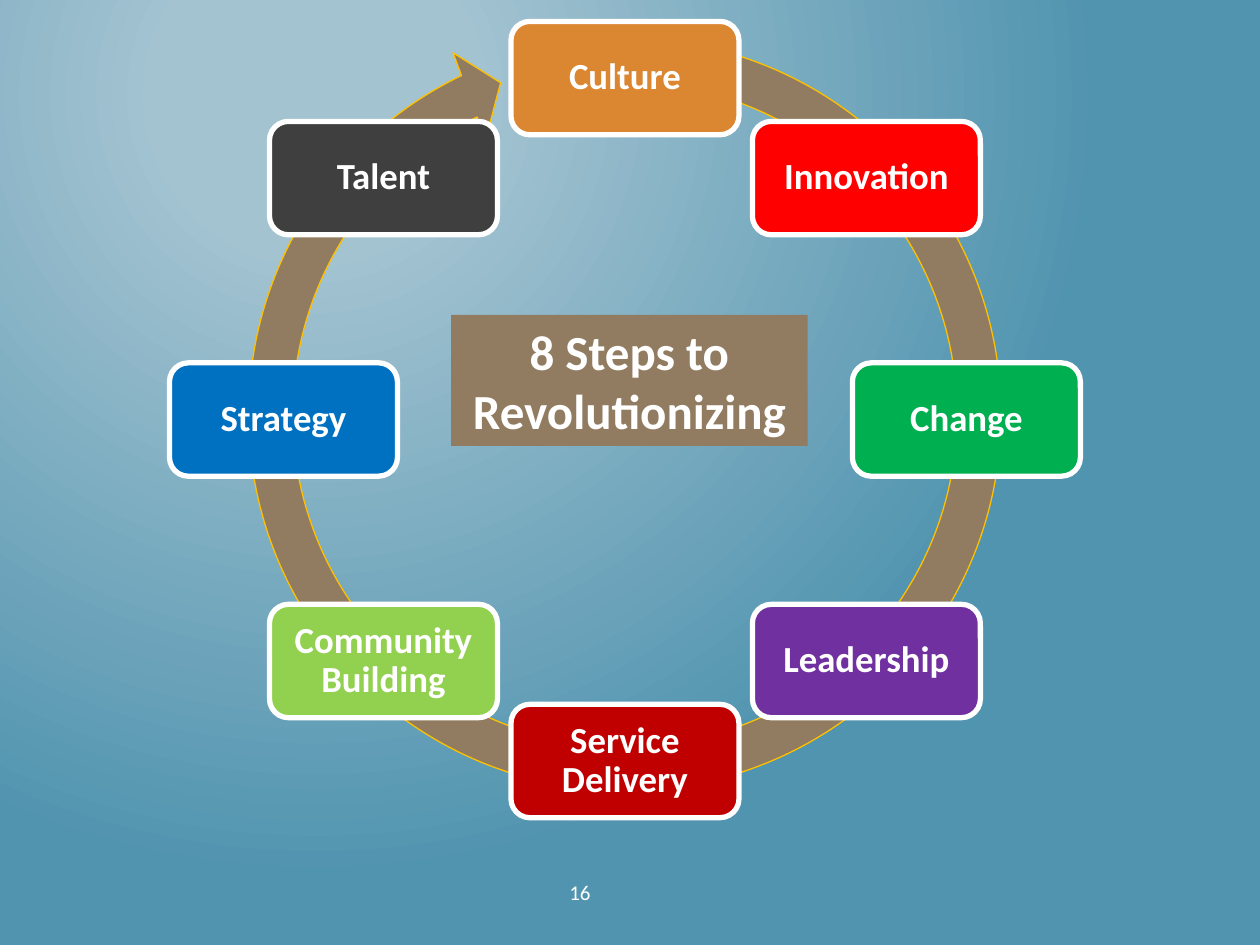
"""Build the slide showing eight revolutionizing steps around a circular arrow."""
from math import cos, radians, sin

from lxml import etree
from pptx import Presentation
from pptx.dml.color import RGBColor
from pptx.enum.shapes import MSO_SHAPE
from pptx.enum.text import MSO_ANCHOR, PP_ALIGN
from pptx.oxml.ns import qn
from pptx.util import Inches, Pt

CIRCULAR_ARROW = MSO_SHAPE.CIRCULAR_ARROW
ROUNDED_RECTANGLE = MSO_SHAPE.ROUNDED_RECTANGLE
RECTANGLE = MSO_SHAPE.RECTANGLE
MIDDLE = MSO_ANCHOR.MIDDLE
CENTER = PP_ALIGN.CENTER
LEFT = PP_ALIGN.LEFT

COLORS = {
    "sky": "A3C3D1",
    "sea": "5194AF",
    "ring": "927C61",
    "ring edge": "FFC000",
    "white": "FFFFFF",
    "Culture": "DB8631",
    "Innovation": "FF0000",
    "Change": "00B050",
    "Leadership": "7030A0",
    "Service Delivery": "C00000",
    "Community Building": "92D050",
    "Strategy": "0070C0",
    "Talent": "3F3F3F",
}
STEPS = ["Culture", "Innovation", "Change", "Leadership",
         "Service Delivery", "Community Building", "Strategy", "Talent"]

presentation = Presentation()
presentation.slide_width = Inches(10)
presentation.slide_height = Inches(7.5)
slide = presentation.slides.add_slide(presentation.slide_layouts[6])

UNIT = presentation.slide_width / 100
CENTER_X, CENTER_Y = 49.6, 33.3
RADIUS = 27.1
RING_SIZE = 63.6
STEP_WIDTH, STEP_HEIGHT = 18.1, 9
STEP_INSET = 1.4


def add_block(kind, left, top, width, height, fill, line=None, line_width=0):
    shape = slide.shapes.add_shape(kind, *(round(value * UNIT) for value in (left, top, width, height)))
    shape.shadow.inherit = False
    shape.fill.solid()
    shape.fill.fore_color.rgb = RGBColor.from_string(COLORS[fill])
    if line:
        shape.line.color.rgb = RGBColor.from_string(COLORS[line])
        shape.line.width = Pt(line_width)
    else:
        shape.line.fill.background()
    return shape


def write_text(shape, text, size, bold=True, alignment=CENTER):
    text_frame = shape.text_frame
    text_frame.word_wrap = True
    text_frame.text = text
    paragraph = text_frame.paragraphs[0]
    paragraph.alignment = alignment
    font = paragraph.runs[0].font
    font.name, font.size, font.bold = "Calibri", Pt(size), bold
    font.color.rgb = RGBColor.from_string(COLORS["white"])
    return paragraph


background = slide.background.fill
background.gradient()
for stop, color, position in zip(background.gradient_stops, ("sky", "sea"), (0.2, 1)):
    stop.color.rgb = RGBColor.from_string(COLORS[color])
    stop.position = position
gradient = slide.element.find(".//" + qn("a:gradFill"))
for linear in gradient.findall(qn("a:lin")):
    gradient.remove(linear)
circle = etree.SubElement(gradient, qn("a:path"), path="circle")
etree.SubElement(circle, qn("a:fillToRect"), l="50000", t="20000", r="100000", b="100000")

page_number = slide.shapes.add_textbox(*(round(value * UNIT) for value in (44.2, 69.3, 23.3, 4)))
write_text(page_number, "16", 12, bold=False, alignment=LEFT)

ring = add_block(CIRCULAR_ARROW, CENTER_X - RING_SIZE / 2, CENTER_Y - 0.4 - RING_SIZE / 2,
                 RING_SIZE, RING_SIZE, "ring", "ring edge", 0.75)
for index, adjustment in enumerate((0.055, 3.307, 146.367, 168.814, 0.058)):
    ring.adjustments[index] = adjustment

for index, step in enumerate(STEPS):
    angle = radians(index * 360 / len(STEPS))
    left = CENTER_X + RADIUS * sin(angle) - STEP_WIDTH / 2
    top = CENTER_Y - RADIUS * cos(angle) - STEP_HEIGHT / 2
    box = add_block(ROUNDED_RECTANGLE, left, top, STEP_WIDTH, STEP_HEIGHT, step, "white", 3)
    write_text(box, step, 21).line_spacing = 0.9
    frame = box.text_frame
    frame.vertical_anchor = MIDDLE
    frame.margin_left = frame.margin_right = round(STEP_INSET * UNIT)
    frame.margin_top = frame.margin_bottom = round(STEP_INSET * UNIT)

title = add_block(RECTANGLE, 35.8, 25, 28.3, 10.4, "ring")
write_text(title, "8 Steps to Revolutionizing", 28)
title.text_frame.vertical_anchor = MIDDLE

presentation.save("out.pptx")
